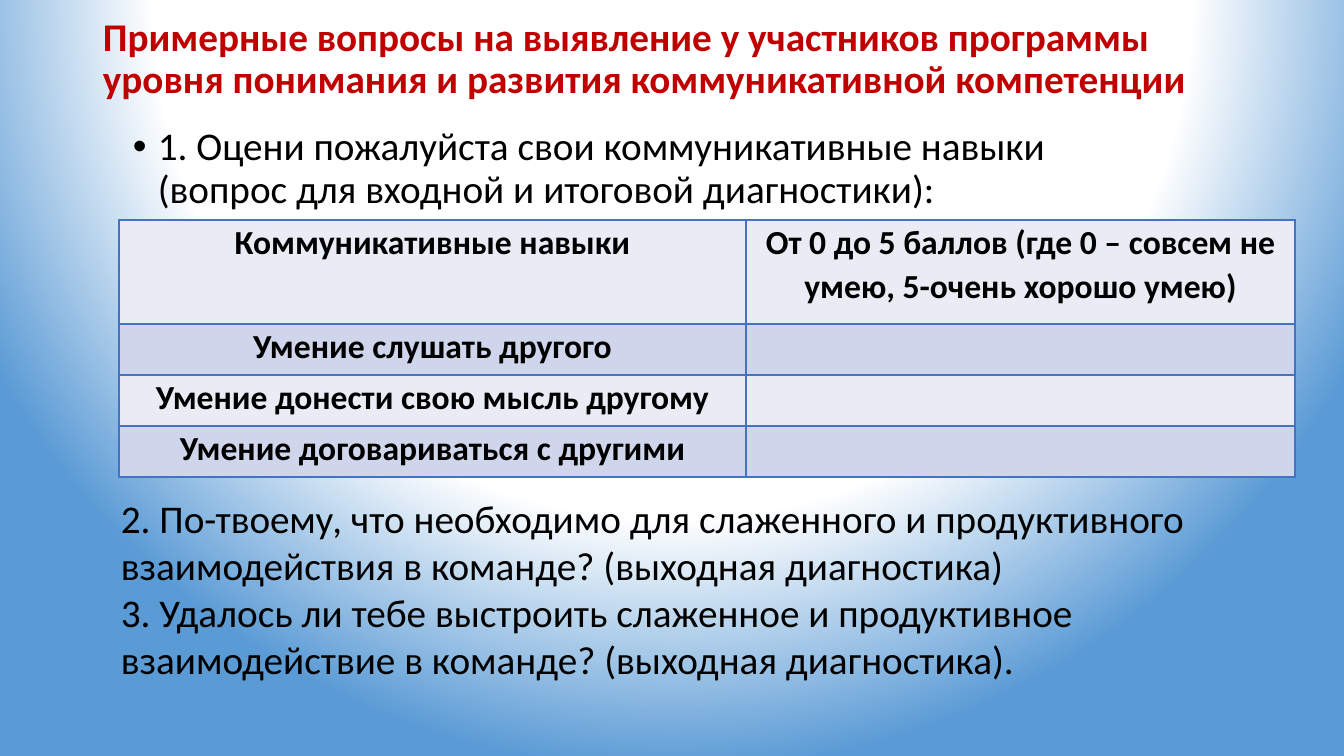
from lxml.etree import SubElement
from pptx import Presentation
from pptx.dml.color import RGBColor
from pptx.enum.text import MSO_ANCHOR, PP_ALIGN
from pptx.oxml import parse_xml
from pptx.oxml.ns import nsdecls, qn
from pptx.util import Pt

SLIDE_WIDTH, SLIDE_HEIGHT = 1344, 756
EMU_PER_PX = 12192000 / SLIDE_WIDTH
FONT = "Calibri"
COLORS = {
    "title": "C00000",
    "text": "000000",
    "border": "4472C4",
    "light_row": "E9EBF5",
    "dark_row": "CFD5EA",
    "center": "FFFFFF",
    "edge": "5B9BD5",
}
TITLE = ("Примерные вопросы на выявление у участников программы "
         "уровня понимания и развития коммуникативной компетенции")
FIRST_QUESTION = ("1. Оцени пожалуйста свои коммуникативные навыки "
                  "(вопрос для входной и итоговой диагностики):")
OTHER_QUESTIONS = [
    "2. По-твоему, что необходимо для слаженного и продуктивного "
    "взаимодействия в команде? (выходная диагностика)",
    "3. Удалось ли тебе выстроить слаженное и продуктивное "
    "взаимодействие в команде? (выходная диагностика).",
]
SKILL_ROWS = [
    ("Коммуникативные навыки",
     "От 0 до 5 баллов (где 0 – совсем не умею, 5-очень хорошо умею)"),
    ("Умение слушать другого", ""),
    ("Умение донести свою мысль другому", ""),
    ("Умение договариваться с другими", ""),
]
COLUMN_WIDTHS = [627, 549]
ROW_HEIGHTS = [104, 51, 51, 51]


def px(length):
    return round(length * EMU_PER_PX)


def paint_background(slide):
    fill = slide.background.fill
    fill.gradient()
    stops = "".join(
        f'<a:gs pos="{position}"><a:srgbClr val="{COLORS[name]}"/></a:gs>'
        for position, name in [(0, "center"), (67000, "center"), (100000, "edge")])
    gradient = parse_xml(
        f'<a:gradFill rotWithShape="1" {nsdecls("a")}><a:gsLst>{stops}</a:gsLst>'
        '<a:path path="circle"><a:fillToRect l="50000" t="-80000" r="50000" '
        'b="180000"/></a:path></a:gradFill>')
    for current in list(slide.element.iter(qn("a:gradFill"))):
        current.getparent().replace(current, gradient)


def add_run(paragraph, text, size, color="text", bold=False):
    run = paragraph.add_run()
    run.text = text
    run.font.name = FONT
    run.font.size = Pt(size)
    run.font.bold = bold
    run.font.color.rgb = RGBColor.from_string(COLORS[color])


def add_text(slide, box, lines, color="text", bold=False, line_spacing=None):
    shape = slide.shapes.add_textbox(*map(px, box))
    frame = shape.text_frame
    frame.word_wrap = True
    for index, line in enumerate(lines):
        paragraph = frame.add_paragraph() if index else frame.paragraphs[0]
        paragraph.line_spacing = line_spacing
        add_run(paragraph, line, 28, color, bold)
    return frame


def add_bullet(paragraph, indent):
    properties = paragraph._p.get_or_add_pPr()
    properties.set("marL", str(px(indent)))
    properties.set("indent", str(-px(indent)))
    SubElement(properties, qn("a:buFont"), typeface="Arial")
    SubElement(properties, qn("a:buChar"), char="•")


def add_borders(cell):
    properties = cell._tc.get_or_add_tcPr()
    for side in ("lnL", "lnR", "lnT", "lnB"):
        line = SubElement(properties, qn(f"a:{side}"), w=str(Pt(1)))
        solid = SubElement(line, qn("a:solidFill"))
        SubElement(solid, qn("a:srgbClr"), val=COLORS["border"])


def fill_cell(cell, text, color):
    add_borders(cell)
    cell.fill.solid()
    cell.fill.fore_color.rgb = RGBColor.from_string(COLORS[color])
    if text:
        cell.margin_left = cell.margin_right = px(7)
        cell.margin_top = cell.margin_bottom = 0
        paragraph = cell.text_frame.paragraphs[0]
        paragraph.alignment = PP_ALIGN.CENTER
        paragraph.line_spacing = 1.07
        paragraph.space_before = paragraph.space_after = Pt(6)
        add_run(paragraph, text, 24, bold=True)


def add_skill_table(slide, left, top):
    table = slide.shapes.add_table(
        len(ROW_HEIGHTS), len(COLUMN_WIDTHS), px(left), px(top),
        px(sum(COLUMN_WIDTHS)), px(sum(ROW_HEIGHTS))).table
    table.first_row = table.horz_banding = False
    for column, width in zip(table.columns, COLUMN_WIDTHS):
        column.width = px(width)
    for index, (row, height) in enumerate(zip(table.rows, ROW_HEIGHTS)):
        row.height = px(height)
        color = "dark_row" if index % 2 else "light_row"
        for cell, text in zip(row.cells, SKILL_ROWS[index]):
            fill_cell(cell, text, color)


def main():
    presentation = Presentation()
    presentation.slide_width = px(SLIDE_WIDTH)
    presentation.slide_height = px(SLIDE_HEIGHT)
    slide = presentation.slides.add_slide(presentation.slide_layouts[6])
    paint_background(slide)

    title = add_text(slide, (93, 40, 1159, 82), [TITLE], "title", True, 0.9)
    title.vertical_anchor = MSO_ANCHOR.MIDDLE
    title.margin_bottom = px(47)

    question = add_text(slide, (123, 122, 1063, 100), [FIRST_QUESTION], line_spacing=0.9)
    question.paragraphs[0].space_before = Pt(10)
    add_bullet(question.paragraphs[0], 25)

    add_skill_table(slide, 119, 220)
    add_text(slide, (111, 489, 1184, 254), OTHER_QUESTIONS)
    presentation.save("out.pptx")


if __name__ == "__main__":
    main()
